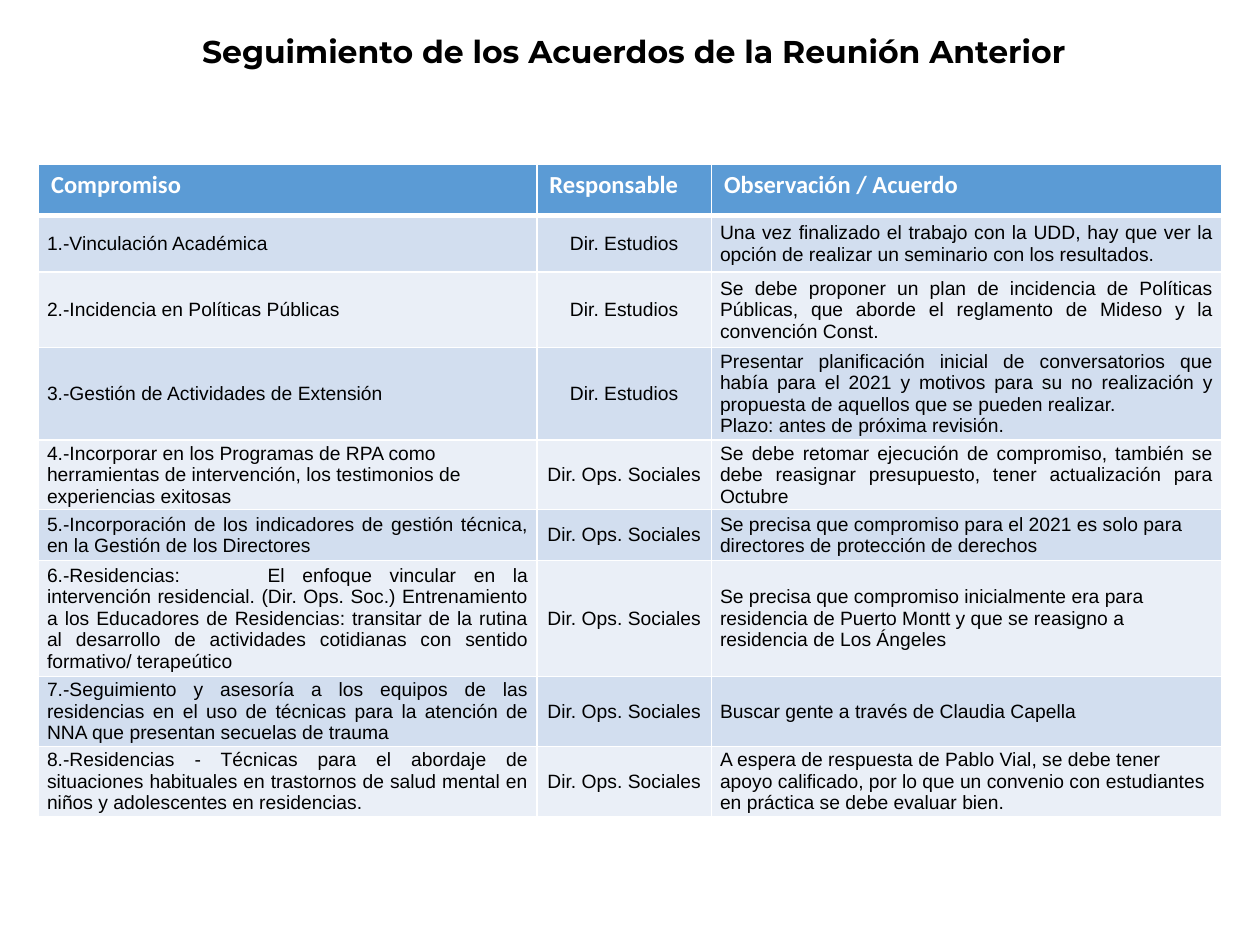
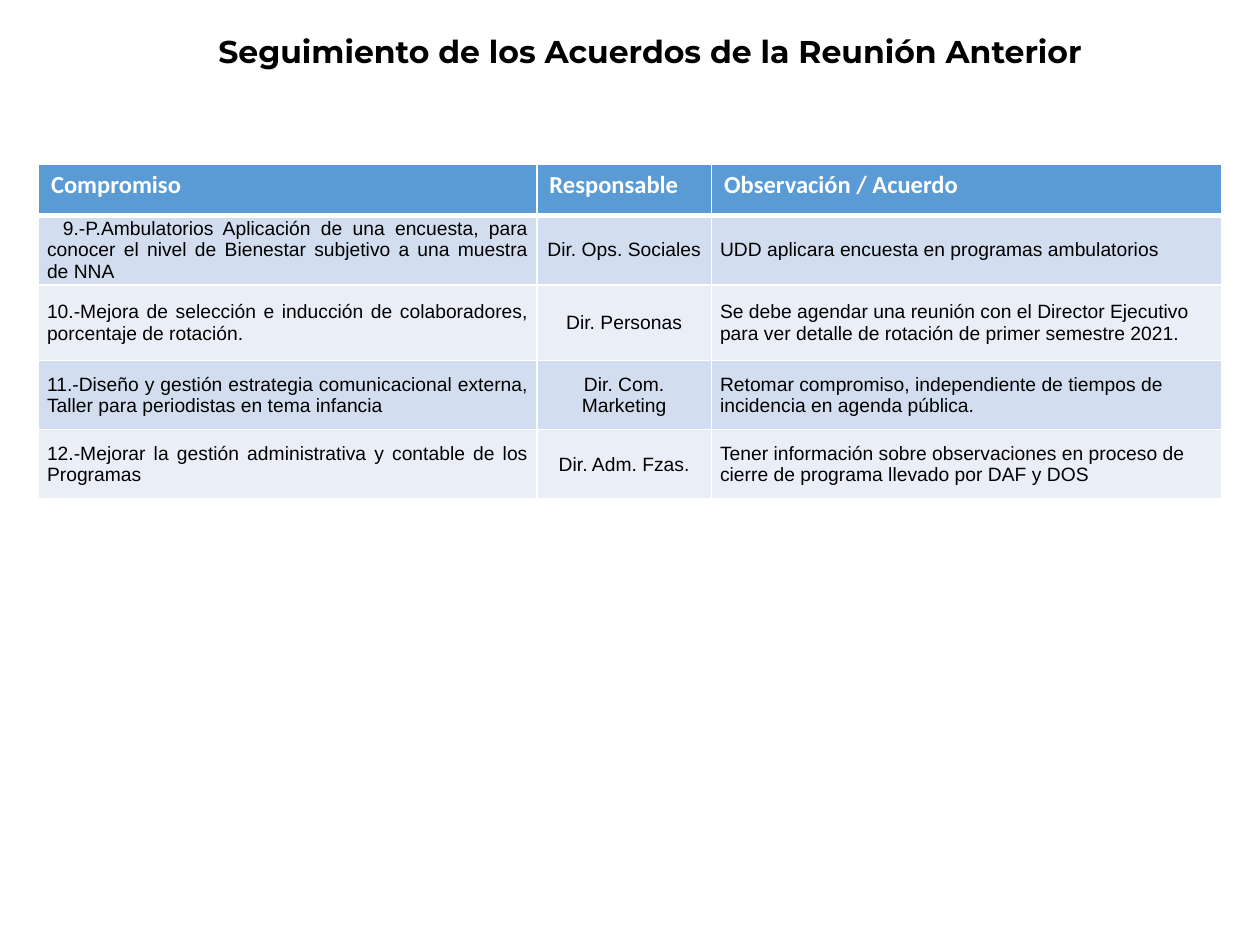
import dataclasses

import lxml.etree
import pptx
import pptx.dml.color
import pptx.enum.text
import pptx.oxml.ns
import pptx.util

Pt = pptx.util.Pt
qn = pptx.oxml.ns.qn
Align = pptx.enum.text.PP_ALIGN
Anchor = pptx.enum.text.MSO_ANCHOR
rgb = pptx.dml.color.RGBColor.from_string


@dataclasses.dataclass(frozen=True)
class Font:
    name: str
    size: int
    color: str
    bold: bool


@dataclasses.dataclass(frozen=True)
class Theme:
    title: Font = Font("Montserrat", 18, "000000", True)
    heading: Font = Font("Calibri", 14, "FFFFFF", True)
    body: Font = Font("Arial", 11, "000000", False)
    heading_fill: str = "5B9BD5"
    bands: tuple = ("D2DEEF", "EAEFF7")
    rule: str = "FFFFFF"
    thin: int = 1
    thick: int = 3
    heading_margins: tuple = (7.2, 3.6)
    body_margins: tuple = (4.9, 0)


@dataclasses.dataclass(frozen=True)
class Commitment:
    task: str
    owner: str
    remark: str
    height: float
    aligns: tuple = (Align.JUSTIFY, Align.CENTER, Align.LEFT)
    indent: float = 0
    tab: float = 0


class Deck:
    def __init__(self, theme):
        self.theme = theme
        self.presentation = pptx.Presentation()
        self.presentation.slide_width = Pt(720)
        self.presentation.slide_height = Pt(540)
        self.slide = None

    def new_slide(self):
        self.slide = self.presentation.slides.add_slide(self.presentation.slide_layouts[6])

    def set_text(self, frame, text, font, align):
        frame.text = text
        for paragraph in frame.paragraphs:
            paragraph.alignment = align
            paragraph.font.name = font.name
            paragraph.font.size = Pt(font.size)
            paragraph.font.bold = font.bold
            paragraph.font.color.rgb = rgb(font.color)

    def title(self, text, left):
        frame = self.slide.shapes.add_textbox(Pt(left), Pt(0), Pt(584), Pt(58.3)).text_frame
        frame.word_wrap = True
        frame.vertical_anchor = Anchor.MIDDLE
        frame.margin_left = Pt(12.2)
        self.set_text(frame, text, self.theme.title, Align.CENTER)

    def borders(self, cell, top, bottom):
        properties = cell._tc.get_or_add_tcPr()
        widths = {"L": self.theme.thin, "R": self.theme.thin, "T": top, "B": bottom}
        for side, width in widths.items():
            line = lxml.etree.SubElement(properties, qn(f"a:ln{side}"), w=str(Pt(width)))
            fill = lxml.etree.SubElement(line, qn("a:solidFill"))
            lxml.etree.SubElement(fill, qn("a:srgbClr"), val=self.theme.rule)

    def cell(self, cell, text, font, align, fill, margins, anchor, top, bottom):
        self.borders(cell, top, bottom)
        cell.fill.solid()
        cell.fill.fore_color.rgb = rgb(fill)
        cell.margin_left = cell.margin_right = Pt(margins[0])
        cell.margin_top = cell.margin_bottom = Pt(margins[1])
        cell.vertical_anchor = anchor
        self.set_text(cell.text_frame, text, font, align)

    def first_line(self, cell, indent, tab):
        properties = cell.text_frame.paragraphs[0]._p.get_or_add_pPr()
        if indent:
            properties.set("indent", str(Pt(indent)))
        if tab:
            stops = lxml.etree.Element(qn("a:tabLst"))
            lxml.etree.SubElement(stops, qn("a:tab"), pos=str(Pt(tab)), algn="l")
            properties.insert(0, stops)

    def commitments(self, headings, widths, rows):
        theme = self.theme
        heights = [29.5] + [row.height for row in rows]
        table = self.slide.shapes.add_table(
            len(heights), len(widths), Pt(22), Pt(93.6), Pt(sum(widths)), Pt(sum(heights))
        ).table
        table.first_row = table.horz_banding = False
        for column, width in zip(table.columns, widths):
            column.width = Pt(width)
        for line, height in zip(table.rows, heights):
            line.height = Pt(height)
        for column, heading in enumerate(headings):
            self.cell(table.cell(0, column), heading, theme.heading, Align.LEFT,
                      theme.heading_fill, theme.heading_margins, Anchor.TOP,
                      theme.thin, theme.thick)
        for number, row in enumerate(rows, 1):
            band = theme.bands[(number - 1) % 2]
            top = theme.thick if number == 1 else theme.thin
            for column, text in enumerate((row.task, row.owner, row.remark)):
                self.cell(table.cell(number, column), text, theme.body, row.aligns[column],
                          band, theme.body_margins, Anchor.MIDDLE, top, theme.thin)
            self.first_line(table.cell(number, 0), row.indent, row.tab)


TITLE = "Seguimiento de los Acuerdos de la Reunión Anterior"
HEADINGS = ("Compromiso", "Responsable", "Observación / Acuerdo")
WIDTHS = (284.8, 99.8, 291.6)
REMARK_JUSTIFIED = (Align.LEFT, Align.CENTER, Align.JUSTIFY)
STUDIES = "Dir. Estudios"
SOCIAL = "Dir. Ops. Sociales"

FIRST_COMMITMENTS = (
    Commitment("1.-Vinculación Académica", STUDIES,
               "Una vez finalizado el trabajo con la UDD, hay que ver la opción de realizar "
               "un seminario con los resultados.", 32.4, REMARK_JUSTIFIED),
    Commitment("2.-Incidencia en Políticas Públicas", STUDIES,
               "Se debe proponer un plan de incidencia de Políticas Públicas, que aborde el "
               "reglamento de Mideso y la convención Const.", 43.2, REMARK_JUSTIFIED),
    Commitment("3.-Gestión de Actividades de Extensión", STUDIES,
               "Presentar planificación inicial de conversatorios que había para el 2021 y "
               "motivos para su no realización y propuesta de aquellos que se pueden realizar.\n"
               "Plazo: antes de próxima revisión.", 39.6, REMARK_JUSTIFIED),
    Commitment("4.-Incorporar en los Programas de RPA como herramientas de intervención, "
               "los testimonios de experiencias exitosas", SOCIAL,
               "Se debe retomar ejecución de compromiso, también se debe reasignar "
               "presupuesto, tener actualización para Octubre", 39.6, REMARK_JUSTIFIED),
    Commitment("5.-Incorporación de los indicadores de gestión técnica, en la Gestión de "
               "los Directores", SOCIAL,
               "Se precisa que compromiso para el 2021 es solo para directores de "
               "protección de derechos", 29.2),
    Commitment("6.-Residencias:\tEl enfoque vincular en la intervención residencial. "
               "(Dir. Ops. Soc.) Entrenamiento a los Educadores de Residencias: transitar de "
               "la rutina al desarrollo de actividades cotidianas con sentido formativo/ "
               "terapeútico", SOCIAL,
               "Se precisa que compromiso inicialmente era para residencia de Puerto Montt y "
               "que se reasigno a residencia de Los Ángeles", 50.4, tab=126),
    Commitment("7.-Seguimiento y asesoría a los equipos de las residencias en el uso de "
               "técnicas para la atención de NNA que presentan secuelas de trauma", SOCIAL,
               "Buscar gente a través de Claudia Capella", 40.1),
    Commitment("8.-Residencias - Técnicas para el abordaje de situaciones habituales en "
               "trastornos de salud mental en niños y adolescentes en residencias.", SOCIAL,
               "A espera de respuesta de Pablo Vial, se debe tener apoyo calificado, por lo "
               "que un convenio con estudiantes en práctica se debe evaluar bien.", 40.1),
)

LAST_COMMITMENTS = (
    Commitment("9.-P.Ambulatorios Aplicación de una encuesta, para conocer el nivel de "
               "Bienestar subjetivo a una muestra de NNA", SOCIAL,
               "UDD aplicara encuesta en programas ambulatorios", 32.4, indent=9),
    Commitment("10.-Mejora de selección e inducción de colaboradores, porcentaje de "
               "rotación.", "Dir. Personas",
               "Se debe agendar una reunión con el Director Ejecutivo para ver detalle de "
               "rotación de primer semestre 2021.", 43.2),
    Commitment("11.-Diseño y gestión estrategia comunicacional externa, Taller para "
               "periodistas en tema infancia", "Dir. Com. Marketing",
               "Retomar compromiso, independiente de tiempos de incidencia en agenda "
               "pública.", 39.6),
    Commitment("12.-Mejorar la gestión administrativa y contable de los Programas",
               "Dir. Adm. Fzas.",
               "Tener información sobre observaciones en proceso de cierre de programa "
               "llevado por DAF y DOS", 39.6),
)


def main():
    deck = Deck(Theme())
    for title_left, commitments in ((67.7, FIRST_COMMITMENTS), (77, LAST_COMMITMENTS)):
        deck.new_slide()
        deck.title(TITLE, title_left)
        deck.commitments(HEADINGS, WIDTHS, commitments)
    deck.presentation.save("out.pptx")


if __name__ == "__main__":
    main()
